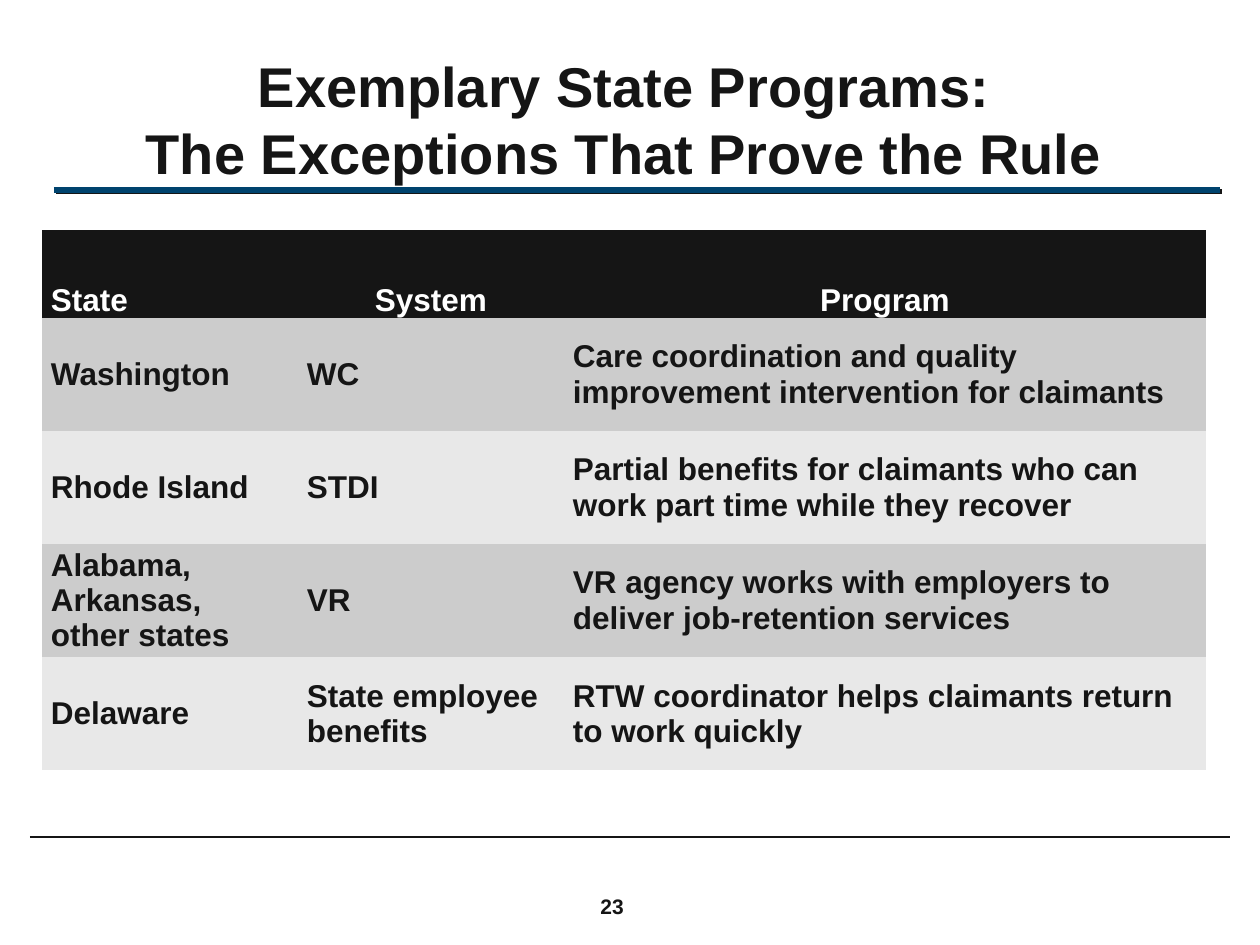
import dataclasses

import pptx
import pptx.dml.color
import pptx.enum.text
import pptx.oxml
import pptx.oxml.ns
import pptx.util

PIXELS_PER_INCH = 126
ALIGN = pptx.enum.text.PP_ALIGN
ANCHOR = pptx.enum.text.MSO_ANCHOR


@dataclasses.dataclass(frozen=True)
class Theme:
    font: str = "Arial"
    ink: str = "151515"
    rule: str = "00436E"
    header_text: str = "FFFFFF"
    bands: tuple = ("CCCCCC", "E8E8E8")
    title_size: int = 32
    table_size: int = 18
    number_size: int = 12
    no_table_style: str = "{2D5ABB26-0587-4C30-8999-92F81FD0307C}"


THEME = Theme()
COLUMN_WIDTHS = (256, 266, 642)
HEADER_HEIGHT = 88
ROW_HEIGHT = 113
PROGRAMS = (
    ("State", "System", "Program"),
    ("Washington", "WC",
     "Care coordination and quality improvement intervention for claimants"),
    ("Rhode Island", "STDI",
     "Partial benefits for claimants who can work part time while they recover"),
    ("Alabama, Arkansas, other states", "VR",
     "VR agency works with employers to deliver job-retention services"),
    ("Delaware", "State employee benefits",
     "RTW coordinator helps claimants return to work quickly"),
)


def px(length):
    return pptx.util.Emu(round(length * 914400 / PIXELS_PER_INCH))


def color(value):
    return pptx.dml.color.RGBColor.from_string(value)


def apply_format(target, values):
    for name, value in values.items():
        setattr(target, name, value)


def write_text(text_frame, text, size, text_color, paragraph_format):
    text_frame.text = text
    for paragraph in text_frame.paragraphs:
        apply_format(paragraph, paragraph_format)
        for run in paragraph.runs:
            apply_format(run.font, {
                "name": THEME.font, "size": pptx.util.Pt(size), "bold": True})
            run.font.color.rgb = color(text_color)


def add_text(slide, text, box, size, alignment, anchor):
    shape = slide.shapes.add_textbox(*map(px, box))
    apply_format(shape.text_frame, {"word_wrap": True, "vertical_anchor": anchor})
    write_text(shape.text_frame, text, size, THEME.ink, {"alignment": alignment})


def add_rule(slide, left, right, top, width, line_color, shadow=False):
    connector = slide.shapes.add_connector(1, px(left), px(top), px(right), px(top))
    connector.line.width = pptx.util.Pt(width)
    connector.line.color.rgb = color(line_color)
    effect = (
        '<a:outerShdw dist="17780" dir="2700000" algn="ctr" rotWithShape="0">'
        f'<a:srgbClr val="{THEME.ink}"/></a:outerShdw>' if shadow else "")
    namespace = pptx.oxml.ns.nsdecls("a")
    connector._element.spPr.append(pptx.oxml.parse_xml(
        f"<a:effectLst {namespace}>{effect}</a:effectLst>"))


def fill_cell(cell, text, row, column):
    header = row == 0
    apply_format(cell, {
        "margin_left": px(9), "margin_right": px(9),
        "margin_top": 0, "margin_bottom": 0,
        "vertical_anchor": ANCHOR.BOTTOM if header else ANCHOR.MIDDLE})
    cell.fill.solid()
    cell.fill.fore_color.rgb = color(
        THEME.ink if header else THEME.bands[(row - 1) % 2])
    write_text(
        cell.text_frame, text, THEME.table_size,
        THEME.header_text if header else THEME.ink,
        {"alignment": ALIGN.CENTER if header and column else ALIGN.LEFT,
         "space_after": pptx.util.Pt(6)})


def add_program_table(slide, left, top):
    heights = [HEADER_HEIGHT] + [ROW_HEIGHT] * (len(PROGRAMS) - 1)
    table = slide.shapes.add_table(
        len(heights), len(COLUMN_WIDTHS), px(left), px(top),
        px(sum(COLUMN_WIDTHS)), px(sum(heights))).table
    style = table._tbl.tblPr.find(pptx.oxml.ns.qn("a:tableStyleId"))
    style.text = THEME.no_table_style
    for column, width in zip(table.columns, COLUMN_WIDTHS):
        column.width = px(width)
    for row, height in zip(table.rows, heights):
        row.height = px(height)
    for row, texts in enumerate(PROGRAMS):
        for column, text in enumerate(texts):
            fill_cell(table.cell(row, column), text, row, column)


def main():
    presentation = pptx.Presentation()
    apply_format(presentation, {"slide_width": px(1260), "slide_height": px(945)})
    slide = presentation.slides.add_slide(presentation.slide_layouts[6])
    add_rule(slide, 54, 1220, 190, 3, THEME.rule, shadow=True)
    add_rule(slide, 30, 1230, 837, 1.5, THEME.ink)
    add_text(slide, "23", (588, 887, 72, 38), THEME.number_size,
             ALIGN.LEFT, ANCHOR.TOP)
    add_text(slide, "Exemplary State Programs:\vThe Exceptions That Prove the Rule",
             (42, 34, 1164, 158), THEME.title_size, ALIGN.CENTER, ANCHOR.BOTTOM)
    add_program_table(slide, 42, 230)
    presentation.save("out.pptx")


if __name__ == "__main__":
    main()
